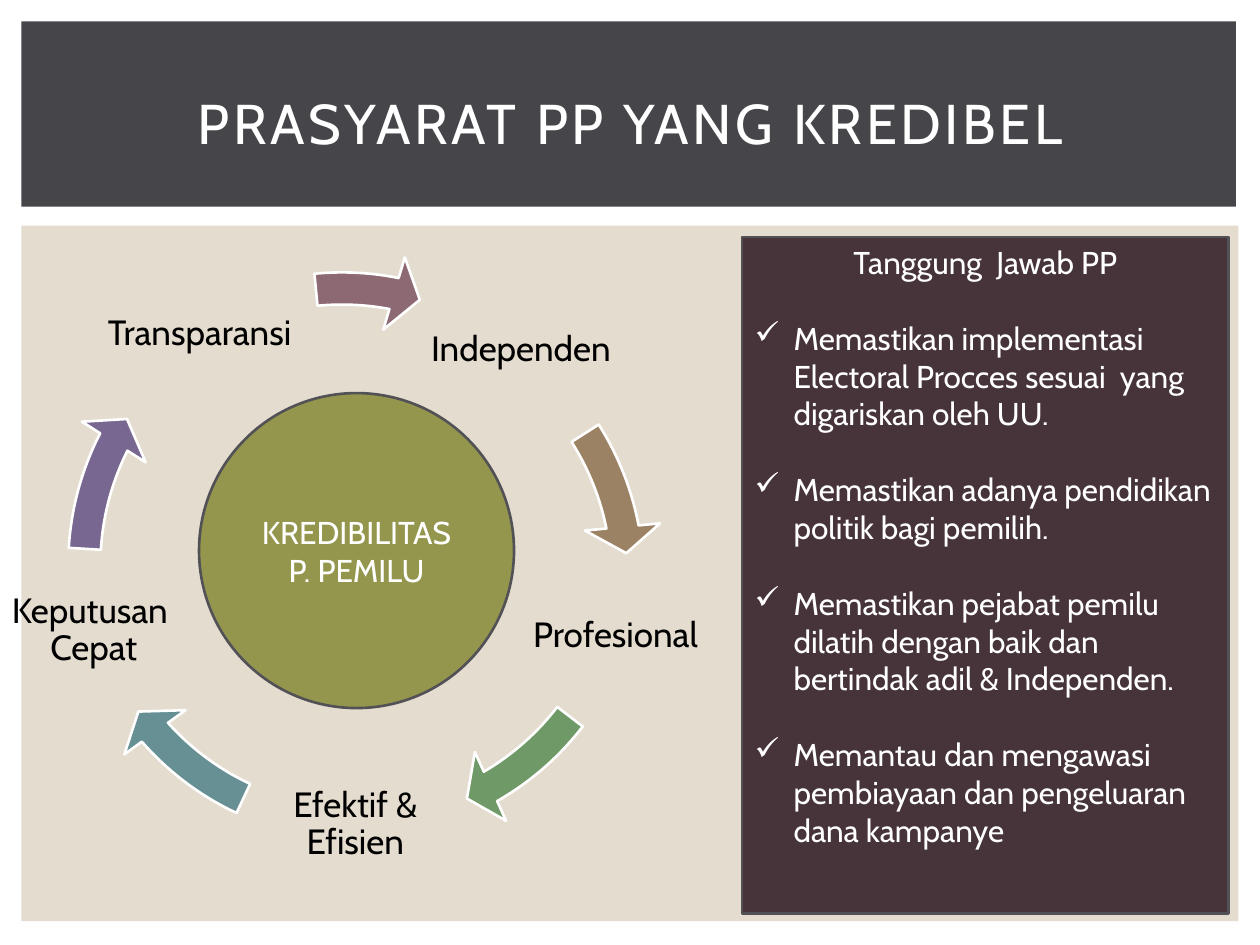
from lxml.etree import SubElement
from pptx import Presentation
from pptx.dml.color import RGBColor
from pptx.enum.shapes import MSO_SHAPE as Preset
from pptx.enum.text import MSO_ANCHOR as Anchor, PP_ALIGN as Align
from pptx.oxml.ns import qn
from pptx.util import Inches, Pt

FONT = "Cabin"
DARK_LINE = "525256"
ARROW_SIZE = 4.91

LABELS = [
    ("Independen", 3.33, 2.12, 1.61),
    ("Profesional", 3.77, 4.39, 2.23),
    ("Efektif & Efisien", 1.92, 5.89, 1.8),
    ("Keputusan  Cepat", -0.17, 4.35, 1.83),
    ("Transparansi", 0.67, 2, 1.83),
]
ARROWS = [
    (0.37, 2.14, 327.55, 348.96, "9C8265"),
    (0.36, 1.92, 37.54, 59.99, "6F9966"),
    (0.39, 1.93, 115.08, 138.54, "679095"),
    (0.37, 2.03, 183.43, 206.94, "786891"),
    (0.26, 1.99, 264.49, 281.04, "8D6974"),
]
DUTIES = [
    "Memastikan implementasi Electoral Procces sesuai  yang digariskan oleh UU.",
    "Memastikan adanya pendidikan politik bagi pemilih.",
    "Memastikan pejabat pemilu dilatih dengan baik dan bertindak adil & Independen.",
    "Memantau dan mengawasi pembiayaan dan pengeluaran dana kampanye",
]


def color(value):
    return RGBColor.from_string(value)


def set_attributes(target, values):
    for name, value in values.items():
        setattr(target, name, value)


def add_shape(slide, preset, box, fill, line=None):
    shape = slide.shapes.add_shape(preset, *map(Inches, box))
    shape.shadow.inherit = False
    shape.fill.solid()
    shape.fill.fore_color.rgb = color(fill)
    if line:
        shape.line.color.rgb = color(line)
        shape.line.width = Pt(1.5)
    else:
        shape.line.fill.background()
    return shape


def add_arrow(slide, left, top, start, end, fill):
    box = (left, top, ARROW_SIZE, ARROW_SIZE)
    arrow = add_shape(slide, Preset.CIRCULAR_ARROW, box, fill, "FFFFFF")
    degree = 0.6
    values = (0.052, 5.6 * degree, end * degree, start * degree, 0.061)
    for index, value in enumerate(values):
        arrow.adjustments[index] = value


def add_bullet(paragraph):
    properties = paragraph._p.get_or_add_pPr()
    properties.set("marL", str(Inches(0.31)))
    properties.set("indent", str(Inches(-0.31)))
    SubElement(properties, qn("a:buChar")).set("char", "✓")


def write_paragraphs(frame, texts, size, font_color="FFFFFF", bulleted=False, **formats):
    for index, text in enumerate(texts):
        paragraph = frame.paragraphs[0] if index == 0 else frame.add_paragraph()
        paragraph.alignment = Align.CENTER
        if bulleted and index:
            paragraph.alignment = Align.LEFT
            paragraph.space_before = Pt(21.7)
            add_bullet(paragraph)
        set_attributes(paragraph, formats)
        run = paragraph.add_run()
        run.text = text
        set_attributes(run.font, {"name": FONT, "size": Pt(size)})
        run.font.color.rgb = color(font_color)


def add_text_box(slide, box, margin=None):
    frame = slide.shapes.add_textbox(*map(Inches, box)).text_frame
    set_attributes(frame, {"word_wrap": True, "vertical_anchor": Anchor.MIDDLE})
    if margin is not None:
        sides = ("left", "top", "right", "bottom")
        set_attributes(frame, {f"margin_{side}": Inches(margin) for side in sides})
    return frame


def add_label(slide, text, left, top, width):
    frame = add_text_box(slide, (left, top, width, 1.31), 0.03)
    write_paragraphs(frame, [text], 20, "000000", line_spacing=0.9)


def add_title(slide, text):
    frame = add_text_box(slide, (0.42, 0.39, 9.17, 1.15))
    write_paragraphs(frame, [text], 32)
    frame.paragraphs[0].runs[0].font._element.set("spc", "200")


def add_center_circle(slide):
    circle = add_shape(slide, Preset.OVAL, (1.58, 3.12, 2.5, 2.5), "94964E", DARK_LINE)
    circle.text_frame.vertical_anchor = Anchor.MIDDLE
    write_paragraphs(circle.text_frame, ["KREDIBILITAS", "P. PEMILU"], 18)


def add_duty_panel(slide):
    panel = add_shape(slide, Preset.RECTANGLE, (5.89, 1.88, 3.86, 5.37), "46343A", DARK_LINE)
    panel.text_frame.vertical_anchor = Anchor.TOP
    write_paragraphs(panel.text_frame, ["Tanggung  Jawab PP", *DUTIES], 18, bulleted=True)


def main():
    presentation = Presentation()
    set_attributes(presentation, {"slide_width": Inches(10), "slide_height": Inches(7.5)})
    slide = presentation.slides.add_slide(presentation.slide_layouts[6])
    add_shape(slide, Preset.RECTANGLE, (0.17, 1.79, 9.66, 5.52), "E3DCCF")
    add_shape(slide, Preset.RECTANGLE, (0.17, 0.17, 9.64, 1.47), "46464A")
    for label, arrow in zip(LABELS, ARROWS):
        add_label(slide, *label)
        add_arrow(slide, *arrow)
    add_title(slide, "PRASYARAT PP YANG KREDIBEL")
    add_center_circle(slide)
    add_duty_panel(slide)
    presentation.save("out.pptx")


if __name__ == "__main__":
    main()
